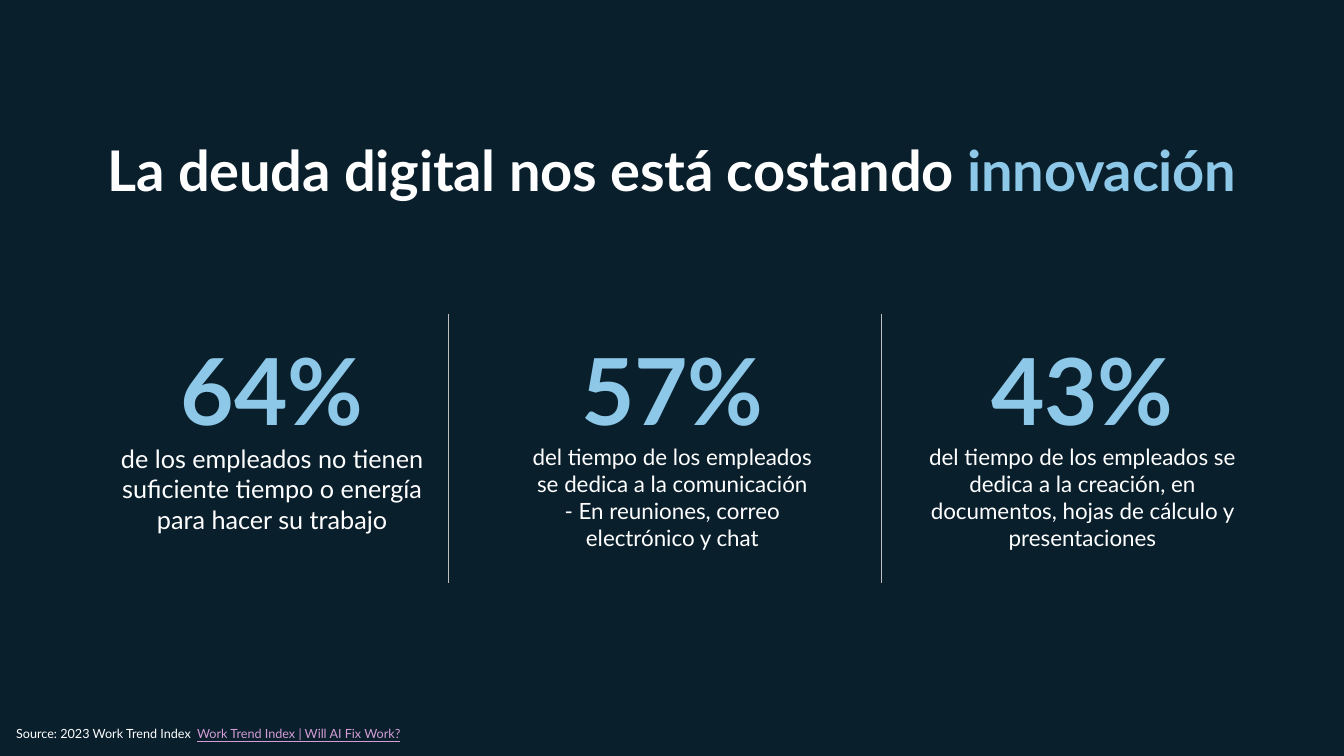
from dataclasses import dataclass

from lxml import etree
from pptx import Presentation
from pptx.dml.color import RGBColor
from pptx.enum.text import MSO_ANCHOR, MSO_AUTO_SIZE, PP_ALIGN
from pptx.oxml.ns import qn
from pptx.util import Inches, Pt

CENTER, LEFT = PP_ALIGN.CENTER, PP_ALIGN.LEFT
TOP, NO_FIT = MSO_ANCHOR.TOP, MSO_AUTO_SIZE.NONE
WIDTH, HEIGHT = 13.33, 7.5
TITLE_ONLY = 5


@dataclass(frozen=True)
class Theme:
    """Colours, font and type sizes of the slide."""
    font: str = "Lato"
    back: str = "091F2C"
    text: str = "FFFFFF"
    accent: str = "8DC8E8"
    link: str = "D59ED7"
    rule: str = "BFBFBF"
    title: int = 40
    figure: int = 66
    large: int = 18
    body: int = 16
    small: int = 9


THEME = Theme()

STATS = [
    (9, 22.5, "64%", THEME.large,
     "de los empleados no tienen suficiente tiempo o energía para hacer su trabajo"),
    (38.78, 22.5, "57%", THEME.body,
     "del tiempo de los empleados se dedica a la comunicación\n"
     "- En reuniones, correo electrónico y chat"),
    (68.04, 25, "43%", THEME.body,
     "del tiempo de los empleados se dedica a la creación, en documentos, "
     "hojas de cálculo y presentaciones"),
]
DIVIDERS = (33.38, 65.57)


def x(percent):
    """Turn a percentage of the slide width into a length."""
    return Inches(WIDTH * percent / 100)


def y(percent):
    """Turn a percentage of the slide height into a length."""
    return Inches(HEIGHT * percent / 100)


def add_text(p, text, size, color=THEME.text, bold=False, underline=False,
             spacing=0, align=CENTER):
    """Append formatted text to a paragraph, breaking lines at newlines."""
    p.alignment = align
    for i, line in enumerate(text.split("\n")):
        if i:
            p.add_line_break()
        r = p.add_run()
        r.text = line
        r.font.name = THEME.font
        r.font.size = Pt(size)
        r.font.bold = bold
        r.font.underline = underline
        r.font.color.rgb = RGBColor.from_string(color)
        if spacing:
            r.font._element.set("spc", str(round(spacing * 100)))


def prepare_frame(sp):
    """Wrap a shape's text without margins and return its frame."""
    tf = sp.text_frame
    tf.word_wrap = True
    tf.auto_size = NO_FIT
    tf.vertical_anchor = TOP
    tf.margin_left = tf.margin_right = tf.margin_top = tf.margin_bottom = 0
    return tf


def add_title(s):
    """Fill the title placeholder with its two-coloured heading."""
    sp = s.shapes.title
    sp.left, sp.top, sp.width, sp.height = x(4.8), y(17.87), x(90.4), y(8.93)
    p = prepare_frame(sp).paragraphs[0]
    style = {"size": THEME.title, "bold": True, "spacing": -0.1}
    add_text(p, "La deuda digital nos está costando ", **style)
    add_text(p, "innovación", color=THEME.accent, **style)


def add_stat(s, left, width, figure, size, caption):
    """Add a large figure with its caption below."""
    tf = prepare_frame(s.shapes.add_textbox(x(left), y(44), x(width), y(29.2)))
    add_text(tf.paragraphs[0], figure, THEME.figure, color=THEME.accent,
             bold=True, spacing=-0.1)
    add_text(tf.add_paragraph(), caption, size)


def add_divider(s, left):
    """Add a thin vertical line between two columns."""
    sp = s.shapes.add_connector(1, x(left), y(41.47), x(left), y(77.07))
    sp.line.color.rgb = RGBColor.from_string(THEME.rule)
    sp.line.width = Pt(0.75)
    etree.SubElement(sp._element.spPr, qn("a:effectLst"))


def add_source(s):
    """Add the source line at the foot of the slide."""
    sp = s.shapes.add_textbox(x(1.2), y(96), x(48.84), y(2))
    p = prepare_frame(sp).paragraphs[0]
    add_text(p, "Source: 2023 Work Trend Index  ", THEME.small, align=LEFT)
    add_text(p, "Work Trend Index | Will AI Fix Work?", THEME.small,
             color=THEME.link, underline=True, align=LEFT)


def main():
    """Build and save the slide."""
    prs = Presentation()
    prs.slide_width, prs.slide_height = Inches(WIDTH), Inches(HEIGHT)
    s = prs.slides.add_slide(prs.slide_layouts[TITLE_ONLY])
    s.background.fill.solid()
    s.background.fill.fore_color.rgb = RGBColor.from_string(THEME.back)
    add_title(s)
    for stat in STATS:
        add_stat(s, *stat)
    for left in DIVIDERS:
        add_divider(s, left)
    add_source(s)
    prs.save("out.pptx")


if __name__ == "__main__":
    main()
